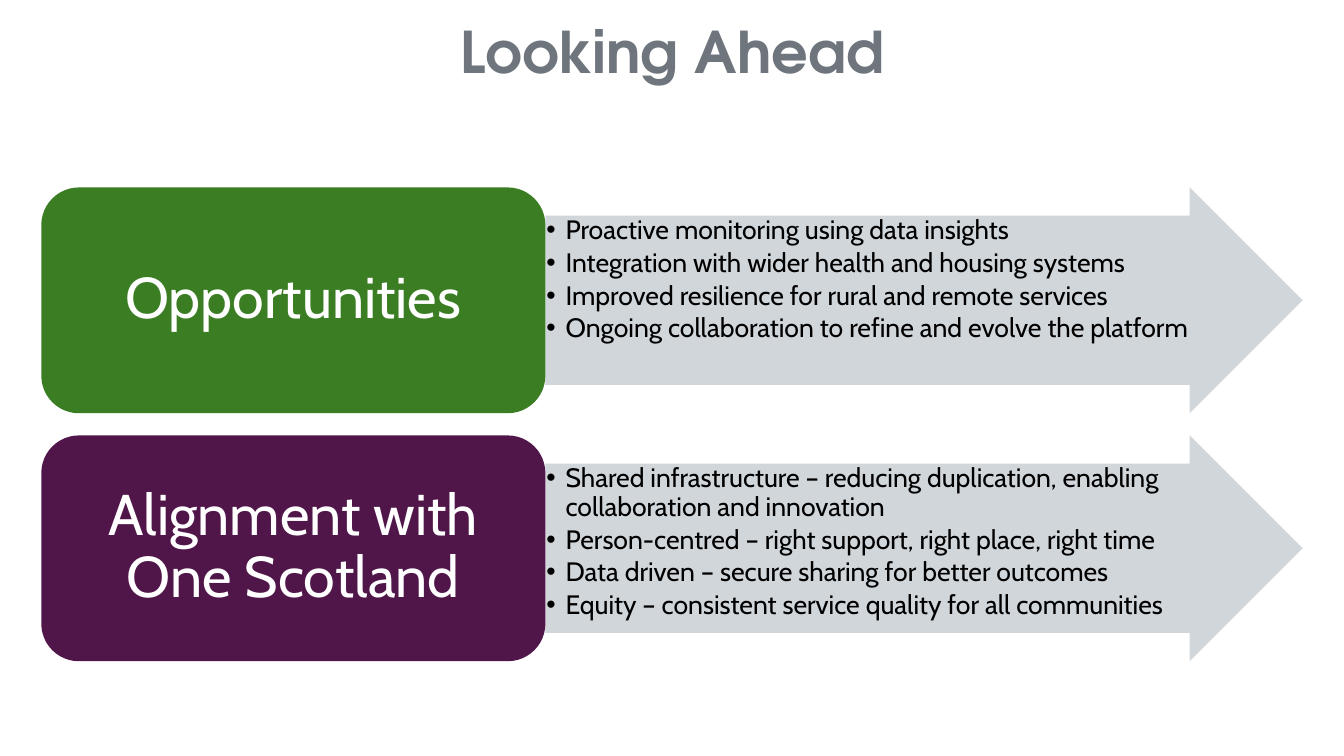
from lxml import etree
from pptx import Presentation
from pptx.dml.color import RGBColor
from pptx.enum.shapes import MSO_SHAPE
from pptx.enum.text import MSO_ANCHOR, PP_ALIGN
from pptx.oxml.ns import qn
from pptx.util import Inches, Pt

ROUNDED = MSO_SHAPE.ROUNDED_RECTANGLE
ARROW = MSO_SHAPE.RIGHT_ARROW
CENTER = PP_ALIGN.CENTER
TOP, MIDDLE = MSO_ANCHOR.TOP, MSO_ANCHOR.MIDDLE

SLATE = RGBColor(0x6E, 0x75, 0x7D)
PALE_GREY = RGBColor(0xCC, 0xD2, 0xD8)
GREEN = RGBColor(0x3B, 0x7D, 0x23)
PLUM = RGBColor(0x50, 0x16, 0x49)
WHITE = RGBColor(0xFF, 0xFF, 0xFF)
BLACK = RGBColor(0x00, 0x00, 0x00)

TITLE_FONT = "TeX Gyre Adventor"
BODY_FONT = "Cabin"

# Grid in inches: a label column, an arrow column and equally spaced rows
LABEL_LEFT, LABEL_WIDTH = 0.41, 5.0
ARROW_LEFT, ARROW_WIDTH = LABEL_LEFT + LABEL_WIDTH, 7.51
FIRST_ROW, ROW_HEIGHT, ROW_PITCH = 1.86, 2.24, 2.46
SHAFT_SHARE = 0.75
HEAD_LENGTH = ROW_HEIGHT / 2
BULLET_INDENT = 0.19

ROWS = [
    ("Opportunities", GREEN, [
        "Proactive monitoring using data insights",
        "Integration with wider health and housing systems",
        "Improved resilience for rural and remote services",
        "Ongoing collaboration to refine and evolve the platform",
    ]),
    ("Alignment with One Scotland", PLUM, [
        "Shared infrastructure – reducing duplication, enabling "
        "collaboration and innovation",
        "Person-centred – right support, right place, right time",
        "Data driven – secure sharing for better outcomes",
        "Equity – consistent service quality for all communities",
    ]),
]


def add_block(slide, preset, left, top, width, height, color):
    shape = slide.shapes.add_shape(
        preset, Inches(left), Inches(top), Inches(width), Inches(height))
    shape.shadow.inherit = False
    shape.fill.solid()
    shape.fill.fore_color.rgb = color
    shape.line.fill.background()
    return shape


def add_text_box(slide, left, top, width, height):
    return slide.shapes.add_textbox(
        Inches(left), Inches(top), Inches(width), Inches(height))


def write_text(shape, lines, size, color, font=BODY_FONT, bold=False,
               alignment=CENTER, anchor=MIDDLE, insets=(0.1, 0.05), after=0):
    """Fill a shape with one paragraph per line; insets are side and top."""
    frame = shape.text_frame
    frame.word_wrap = True
    frame.vertical_anchor = anchor
    frame.margin_left = frame.margin_right = Inches(insets[0])
    frame.margin_top = frame.margin_bottom = Inches(insets[1])
    frame.text = "\n".join(lines)
    for paragraph in frame.paragraphs:
        paragraph.alignment = alignment
        paragraph.line_spacing = 0.9
        paragraph.space_after = Pt(after)
        for run in paragraph.runs:
            run.font.name = font
            run.font.size = Pt(size)
            run.font.bold = bold
            run.font.color.rgb = color


def add_bullets(shape):
    for paragraph in shape.text_frame.paragraphs:
        properties = paragraph._p.get_or_add_pPr()
        properties.set("marL", str(Inches(BULLET_INDENT)))
        properties.set("indent", str(-Inches(BULLET_INDENT)))
        etree.SubElement(properties, qn("a:buFont"), typeface="Arial")
        etree.SubElement(properties, qn("a:buChar"), char="•")


def set_opacity(shape, percent):
    color = shape.fill._xPr.find(qn("a:solidFill"))[0]
    etree.SubElement(color, qn("a:alpha"), val=str(percent * 1000))


def add_arrow(slide, top, points):
    arrow = add_block(
        slide, ARROW, ARROW_LEFT, top, ARROW_WIDTH, ROW_HEIGHT, PALE_GREY)
    arrow.adjustments[0] = SHAFT_SHARE
    arrow.adjustments[1] = HEAD_LENGTH / ROW_HEIGHT
    set_opacity(arrow, 90)

    shaft_height = ROW_HEIGHT * SHAFT_SHARE
    shaft_top = top + (ROW_HEIGHT - shaft_height) / 2
    # The list reaches a quarter of the way into the arrowhead
    list_width = ARROW_WIDTH - HEAD_LENGTH * 0.75
    box = add_text_box(slide, ARROW_LEFT, shaft_top, list_width, shaft_height)
    write_text(box, points, 19, BLACK, alignment=PP_ALIGN.LEFT, anchor=TOP,
               insets=(0.01, 0.01), after=2.85)
    add_bullets(box)


def add_label(slide, top, text, color):
    label = add_block(
        slide, ROUNDED, LABEL_LEFT, top, LABEL_WIDTH, ROW_HEIGHT, color)
    write_text(label, [text], 41, WHITE, insets=(0.17, 0.09))


def main():
    presentation = Presentation()
    presentation.slide_width = Inches(13.33)
    presentation.slide_height = Inches(7.5)
    slide = presentation.slides.add_slide(presentation.slide_layouts[6])

    title = add_text_box(slide, 4.35, 0.19, 4.64, 0.72)
    write_text(title, ["Looking Ahead"], 41, SLATE, font=TITLE_FONT,
               bold=True, anchor=TOP, after=6)

    for index, (text, color, points) in enumerate(ROWS):
        top = FIRST_ROW + index * ROW_PITCH
        add_arrow(slide, top, points)
        add_label(slide, top, text, color)

    presentation.save("out.pptx")


if __name__ == "__main__":
    main()
